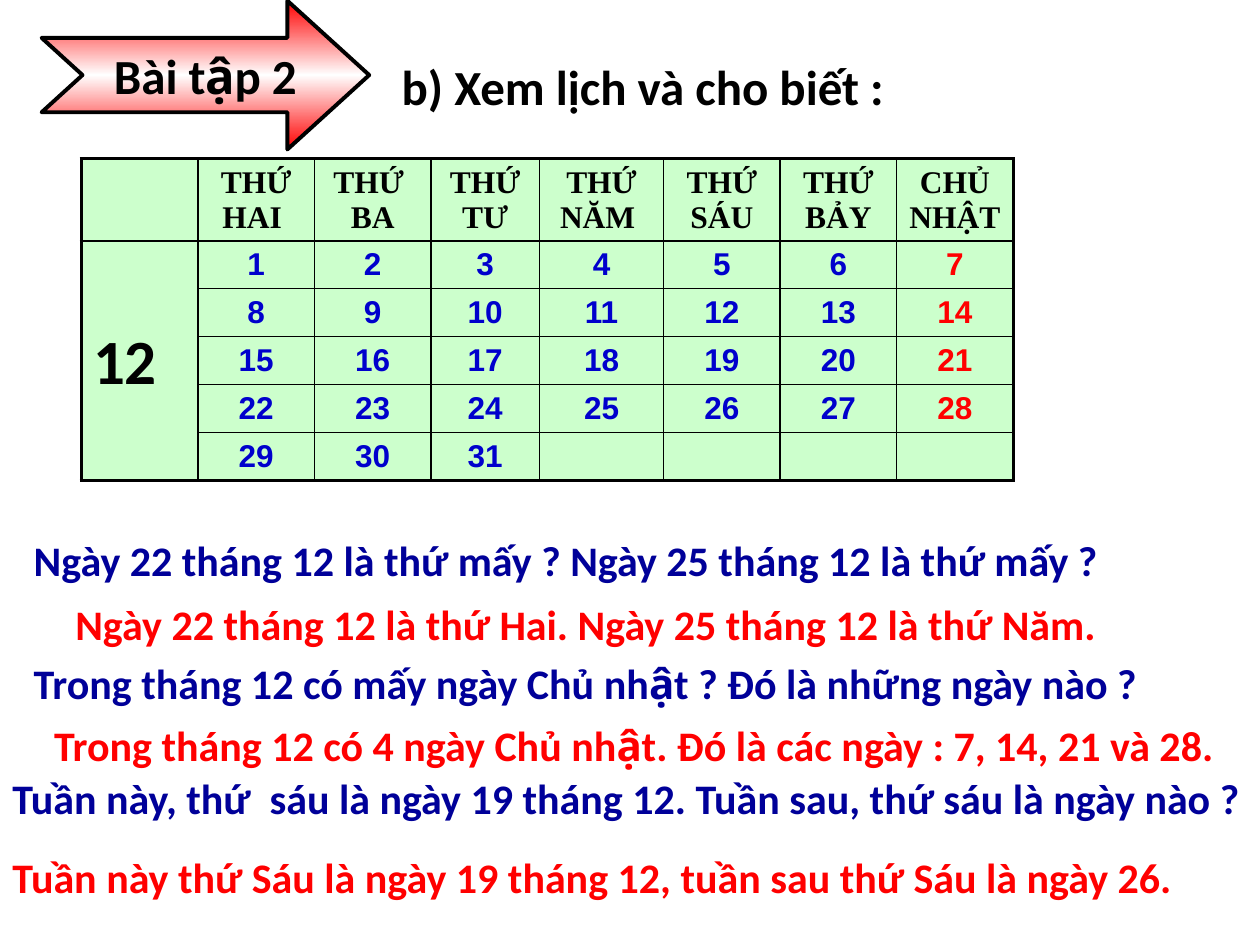
from copy import deepcopy
from dataclasses import dataclass

from lxml import etree
from pptx import Presentation
from pptx import util as u
from pptx.dml.color import RGBColor
from pptx.enum import shapes, text
from pptx.oxml.ns import qn


@dataclass(frozen=True)
class Theme:
    black: str = "000000"
    red: str = "FF0000"
    white: str = "FFFFFF"
    question: str = "000099"
    weekday: str = "0000CC"
    cell: str = "CCFFCC"
    body_font: str = "Calibri"
    head_font: str = "Times New Roman"
    day_font: str = "Arial"
    title_size: float = 28
    month_size: float = 36
    line_size: float = 24
    cell_size: float = 18
    empty_size: float = 12
    thick: float = 2.25
    thin: float = 1


T = Theme()
DAYS = ["THỨ HAI ", "THỨ  BA", "THỨ TƯ", "THỨ NĂM ", "THỨ SÁU", "THỨ BẢY", "CHỦ NHẬT"]
COL_WIDTHS = [66.6, 66.6, 66.6, 62, 71, 66.6, 66.6, 66.6]
ROW_HEIGHTS = [46.9] + [27.4] * 5
LAST_DAY = 31

# Vietnamese vowels and, per combining tone mark, the same vowels with that tone
VOWELS = "aăâeêioôơuưy"
TONES = {
    0x300: "àằầèềìòồờùừỳ",
    0x301: "áắấéếíóốớúứý",
    0x303: "ãẵẫẽễĩõỗỡũữỹ",
    0x309: "ảẳẩẻểỉỏổởủửỷ",
    0x323: "ạặậẹệịọộợụựỵ",
}
TONE_TABLE = {
    ord(toned): vowel + chr(mark)
    for mark, row in TONES.items()
    for vowels, letters in ((VOWELS, row), (VOWELS.upper(), row.upper()))
    for vowel, toned in zip(vowels, letters)
}

# left, top, width, wording, colour
LINES = [
    (12.2, 301.7, 637, "Ngày 22 tháng 12 là thứ mấy ? Ngày 25 tháng 12 là thứ mấy ?", T.question),
    (36, 338.4, 620, "Ngày 22 tháng 12 là thứ Hai. Ngày 25 tháng 12 là thứ Năm.", T.red),
    (12.2, 372.2, 666, "Trong tháng 12 có mấy ngày Chủ nhật ? Đó là những ngày nào ?", T.question),
    (23.8, 407.5, 678, "Trong tháng 12 có 4 ngày Chủ nhật. Đó là các ngày : 7, 14, 21 và 28.", T.red),
    (0, 437.8, 720, "Tuần này, thứ  sáu là ngày 19 tháng 12. Tuần sau, thứ sáu là ngày nào ?", T.question),
    (0, 483.1, 702, "Tuần này thứ Sáu là ngày 19 tháng 12, tuần sau thứ Sáu là ngày 26.", T.red),
]


def write(tf, wording, size, color, font=T.body_font, align=None):
    """Write one paragraph, its tones as combining marks."""
    p = tf.paragraphs[0]
    if wording:
        p.add_run().text = wording.translate(TONE_TABLE)
    else:
        etree.SubElement(p._p, qn("a:endParaRPr"), sz=str(int(T.empty_size * 100)))
    p.alignment = align
    p.font.name, p.font.size, p.font.bold = font, u.Pt(size), True
    p.font.color.rgb = RGBColor.from_string(color)


def add_text(s, left, top, width, height, wording, size, color):
    sp = s.shapes.add_textbox(u.Pt(left), u.Pt(top), u.Pt(width), u.Pt(height))
    tf = sp.text_frame
    tf.word_wrap = True
    tf.auto_size = text.MSO_AUTO_SIZE.SHAPE_TO_FIT_TEXT
    write(tf, wording, size, color)


def add_arrow(s, left, top, width, height, wording):
    sp = s.shapes.add_shape(shapes.MSO_SHAPE.NOTCHED_RIGHT_ARROW,
                            u.Pt(left), u.Pt(top), u.Pt(width), u.Pt(height))
    sp.shadow.inherit = False
    sp.adjustments[0], sp.adjustments[1] = 0.5, 0.55
    sp.line.color.rgb = RGBColor.from_string(T.black)
    sp.line.width = u.Pt(T.thick)

    # Red at both edges, white in the middle
    sp.fill.gradient()
    sp.fill.gradient_angle = 90
    stops = sp.fill._fill._gradFill.find(qn("a:gsLst"))
    stops.append(deepcopy(stops[0]))
    for i, (stop, color) in enumerate(zip(sp.fill.gradient_stops, (T.red, T.white, T.red))):
        stop.color.rgb = RGBColor.from_string(color)
        stop.position = i / 2

    sp.text_frame.word_wrap = False
    sp.text_frame.vertical_anchor = text.MSO_ANCHOR.MIDDLE
    write(sp.text_frame, wording, T.title_size, T.black, align=text.PP_ALIGN.CENTER)


def set_borders(cell, widths):
    tcPr = cell._tc.get_or_add_tcPr()
    for i, (side, width) in enumerate(widths.items()):
        ln = etree.Element(qn("a:ln" + side), w=str(u.Pt(width)))
        fill = etree.SubElement(ln, qn("a:solidFill"))
        etree.SubElement(fill, qn("a:srgbClr"), val=T.black)
        tcPr.insert(i, ln)


def calendar_entry(row, col):
    """Wording, colour and font of one calendar cell."""
    if col == 0:
        return "", T.black, T.day_font
    if row == 0:
        return DAYS[col - 1], T.black, T.head_font
    day = (row - 1) * len(DAYS) + col
    color = T.red if col == len(DAYS) else T.weekday
    return str(day) if day <= LAST_DAY else "", color, T.day_font


def add_calendar(s, left, top):
    rows, cols = len(ROW_HEIGHTS), len(COL_WIDTHS)
    table = s.shapes.add_table(rows, cols, u.Pt(left), u.Pt(top), u.Pt(sum(COL_WIDTHS)),
                               u.Pt(sum(ROW_HEIGHTS))).table
    table.first_row = table.horz_banding = False
    for column, width in zip(table.columns, COL_WIDTHS):
        column.width = u.Pt(width)
    for row, height in zip(table.rows, ROW_HEIGHTS):
        row.height = u.Pt(height)

    for r in range(rows):
        for c in range(cols):
            cell = table.cell(r, c)
            cell.margin_top, cell.margin_bottom = u.Pt(3.6), 0
            cell.fill.solid()
            cell.fill.fore_color.rgb = RGBColor.from_string(T.cell)
            wording, color, font = calendar_entry(r, c)
            write(cell.text_frame, wording, T.cell_size, color, font, text.PP_ALIGN.CENTER)
            # The month cell reaches from the first week to the bottom edge
            outer = {"L": c == 0, "R": c == cols - 1, "T": r == 0,
                     "B": r == rows - 1 or (r > 0 and c == 0)}
            set_borders(cell, {k: T.thick if edge else T.thin for k, edge in outer.items()})

    table.cell(1, 0).merge(table.cell(rows - 1, 0))


def main():
    prs = Presentation()
    prs.slide_width, prs.slide_height = u.Pt(720), u.Pt(540)
    s = prs.slides.add_slide(prs.slide_layouts[6])

    # Heading
    add_arrow(s, 23.8, 0.4, 187.2, 85, "Bài tập 2")
    add_text(s, 222.5, 28.8, 357, 41, "b) Xem lịch và cho biết :", T.title_size, T.black)

    # Calendar with its month
    add_calendar(s, 46.5, 90.7)
    add_text(s, 46.1, 180, 67.7, 50.4, "12", T.month_size, T.black)

    # Questions and answers
    for left, top, width, wording, color in LINES:
        add_text(s, left, top, width, 36, wording, T.line_size, color)

    prs.save("out.pptx")


if __name__ == "__main__":
    main()
